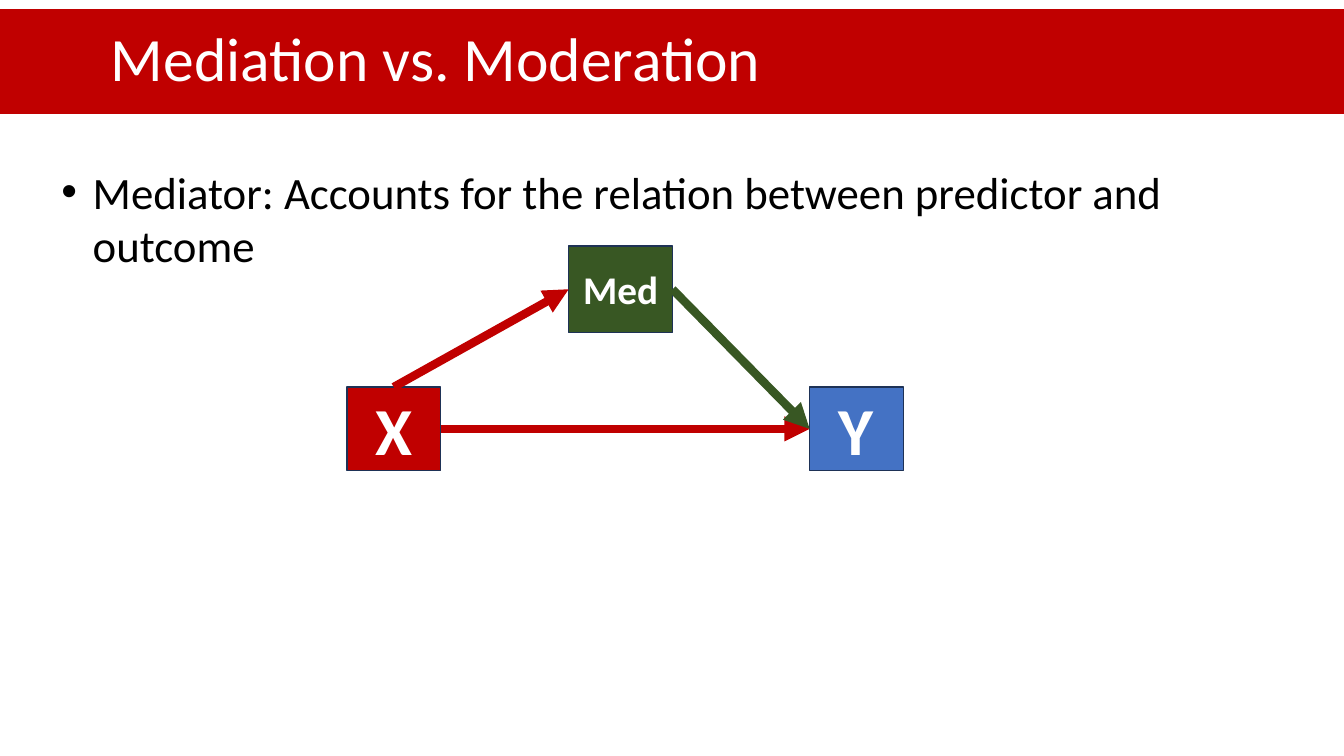
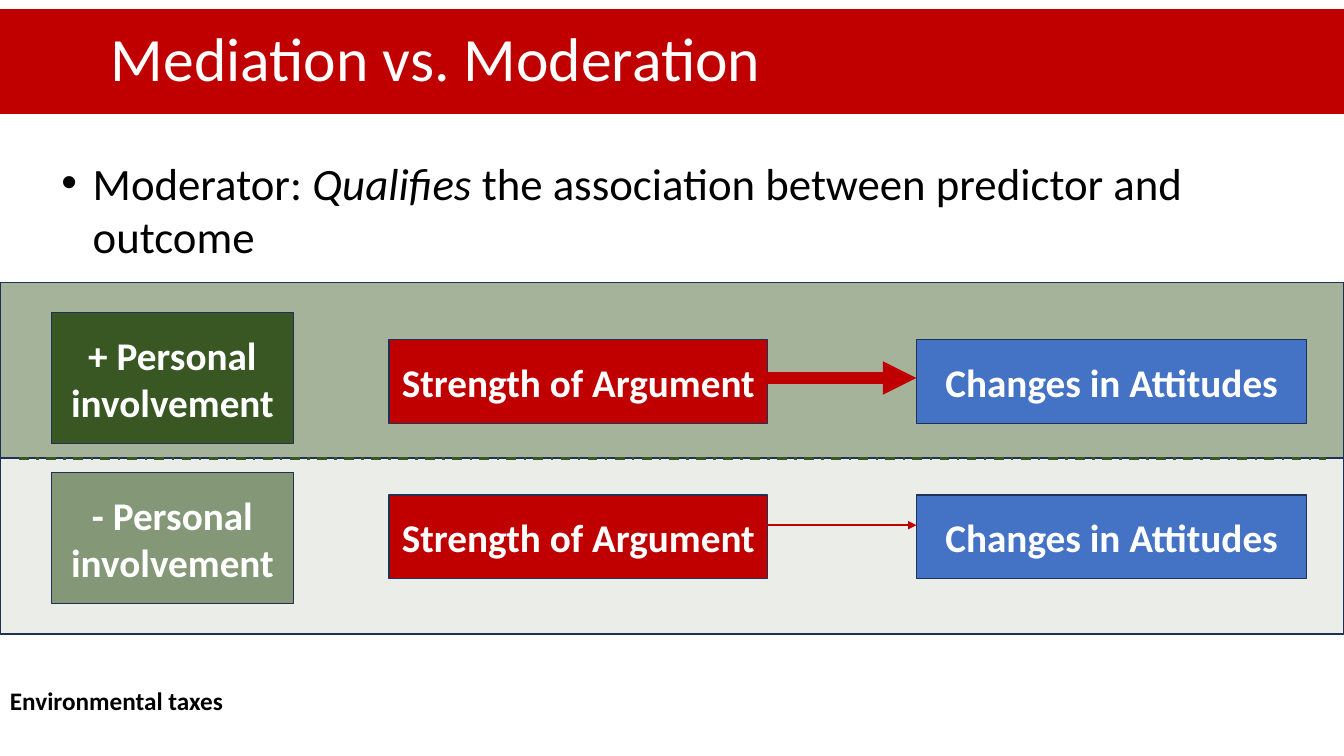
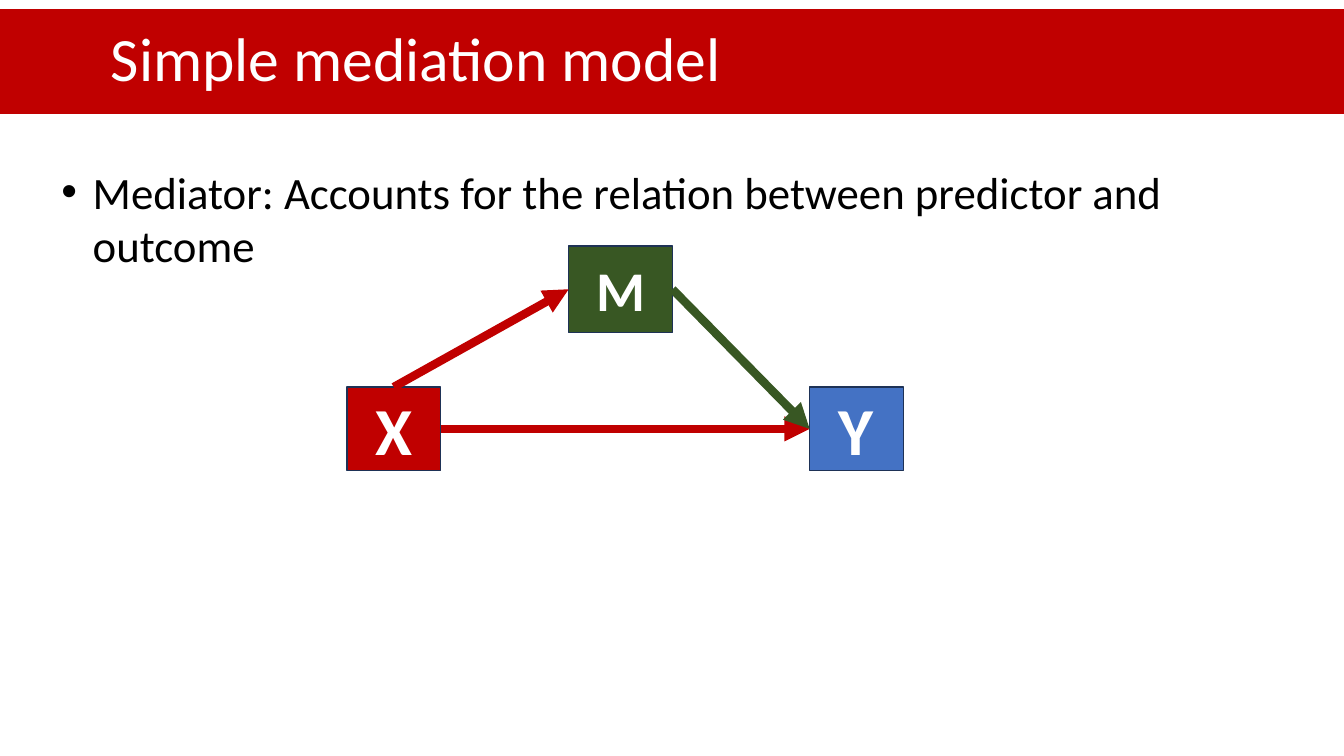
from lxml import etree
from pptx import Presentation, util as u
from pptx.dml.color import RGBColor
from pptx.enum import dml, shapes, text
from pptx.oxml.ns import qn

FONT = "Calibri"
WIDTH = 13.33
COLORS = {
    "red": "C00000",
    "blue": "4472C4",
    "green": "385723",
    "edge": "1E3256",
    "white": "FFFFFF",
    "black": "000000",
}
TOP, LEFT, BOTTOM, RIGHT = range(4)


def color(name):
    return RGBColor.from_string(COLORS[name])


def place(shape, left, top, width, height):
    shape.left, shape.top = u.Inches(left), u.Inches(top)
    shape.width, shape.height = u.Inches(width), u.Inches(height)


def paint(shape, name, alpha=100):
    """Fill a shape; alpha is its opacity in percent."""
    shape.fill.solid()
    shape.fill.fore_color.rgb = color(name)
    if alpha < 100:
        tone = shape.element.spPr.find(qn("a:solidFill"))[0]
        etree.SubElement(tone, qn("a:alpha"), val=str(alpha * 1000))


def write(frame, words, size, ink="white", bold=False, wrap=True,
          align=text.PP_ALIGN.LEFT, anchor=text.MSO_ANCHOR.MIDDLE,
          fit=text.MSO_AUTO_SIZE.NONE):
    """Write one paragraph and return it; words between asterisks are italic."""
    frame.word_wrap = wrap
    frame.auto_size = fit
    frame.vertical_anchor = anchor
    para = frame.paragraphs[0]
    para.alignment = align
    for i, part in enumerate(words.split("*")):
        run = para.add_run()
        run.text = part
        font = run.font
        font.name, font.size = FONT, u.Pt(size)
        font.bold, font.italic = bold, i % 2 == 1
        font.color.rgb = color(ink)
    return para


def page(deck, title, point, top):
    """Add a slide with the red title band and one bullet point."""
    slide = deck.slides.add_slide(deck.slide_layouts[1])
    head, body = slide.placeholders
    place(head, 0, 0.09, WIDTH, 1.04)
    paint(head, "red")
    head.text_frame.margin_left = u.Inches(1.1)
    write(head.text_frame, title, 44).line_spacing = 0.9

    place(body, 0.51, top, 12.03, 1.18)
    para = write(body.text_frame, point, 32, ink="black",
                 anchor=text.MSO_ANCHOR.TOP,
                 fit=text.MSO_AUTO_SIZE.SHAPE_TO_FIT_TEXT)
    para.space_before = u.Pt(12)
    props = para._p.get_or_add_pPr()
    props.set("marL", str(u.Inches(0.31)))
    props.set("indent", str(u.Inches(-0.31)))
    etree.SubElement(props, qn("a:buFont"), typeface="Arial")
    etree.SubElement(props, qn("a:buChar"), char="•")
    return slide


def box(slide, spot, fill, words="", size=28, alpha=100):
    shape = slide.shapes.add_shape(shapes.MSO_SHAPE.RECTANGLE, 0, 0, 0, 0)
    place(shape, *spot)
    shape.shadow.inherit = False
    paint(shape, fill, alpha)
    shape.line.color.rgb = color("edge")
    shape.line.width = u.Pt(1)
    if words:
        write(shape.text_frame, words, size, bold=True,
              align=text.PP_ALIGN.CENTER)
    return shape


def line(slide, ink, width, start=(0, 0), end=(0, 0), dash=None, arrow=True):
    link = slide.shapes.add_connector(
        shapes.MSO_CONNECTOR.STRAIGHT, *map(u.Inches, start + end))
    link.line.color.rgb = color(ink)
    link.line.width = u.Pt(width)
    if dash:
        link.line.dash_style = dash
    props = link.element.spPr
    if arrow:
        etree.SubElement(props.find(qn("a:ln")), qn("a:tailEnd"),
                         type="triangle")
    etree.SubElement(props, qn("a:effectLst"))
    return link


def join(slide, ink, source, out, target, into):
    """Draw an arrow from one side of a box to a side of another."""
    link = line(slide, ink, 6)
    link.begin_connect(source, out)
    link.end_connect(target, into)


def mediate(deck, title, label, size):
    """Add a slide with the triangle of predictor, mediator and outcome."""
    slide = page(deck, title, "Mediator: Accounts for the relation between "
                 "predictor and outcome", 1.58)
    cause = box(slide, (3.44, 3.84, 0.93, 0.83), "red", "X", 48)
    result = box(slide, (8.03, 3.84, 0.93, 0.83), "blue", "Y", 48)
    middle = box(slide, (5.64, 2.44, 1.03, 0.86), "green", label, size)
    join(slide, "red", cause, RIGHT, result, LEFT)
    join(slide, "red", cause, TOP, middle, LEFT)
    join(slide, "green", middle, RIGHT, result, LEFT)


def moderate(deck):
    """Add a slide with one band for each level of the moderator."""
    slide = page(deck, "Mediation vs. Moderation", "Moderator: *Qualifies* "
                 "the association between predictor and outcome", 1.49)
    bands = (
        # top, opacity, level, its top, its opacity, row top, arrow y, weight
        (2.8, 45, "+", 3.1, 100, 3.37, 3.75, 8),
        (4.55, 10, "-", 4.69, 57, 4.91, 5.21, 1.25),
    )
    for top, tint, *_ in bands:
        box(slide, (0, top, WIDTH, 1.74), "green", alpha=tint)
    for _, _, sign, high, alpha, row, mid, weight in bands:
        box(slide, (0.51, high, 2.4, 1.3), "green",
            f"{sign} Personal involvement", alpha=alpha)
        box(slide, (3.86, row, 3.75, 0.83), "red", "Strength of Argument")
        box(slide, (9.09, row, 3.87, 0.83), "blue", "Changes in Attitudes")
        line(slide, "red", weight, (7.61, mid), (9.09, mid))
    line(slide, "green", 1.75, (0.19, 4.55), (13.15, 4.55),
         dash=dml.MSO_LINE.DASH_DOT, arrow=False)

    note = slide.shapes.add_textbox(0, 0, 0, 0)
    place(note, 0, 6.75, 2.35, 0.4)
    write(note.text_frame, "Environmental taxes", 18, ink="black", bold=True,
          wrap=False, anchor=text.MSO_ANCHOR.TOP,
          fit=text.MSO_AUTO_SIZE.SHAPE_TO_FIT_TEXT)


def main():
    deck = Presentation()
    deck.slide_width, deck.slide_height = u.Inches(WIDTH), u.Inches(7.5)
    mediate(deck, "Mediation vs. Moderation", "Med", 28)
    moderate(deck)
    mediate(deck, "Simple mediation model", "M", 40)
    deck.save("out.pptx")


if __name__ == "__main__":
    main()
